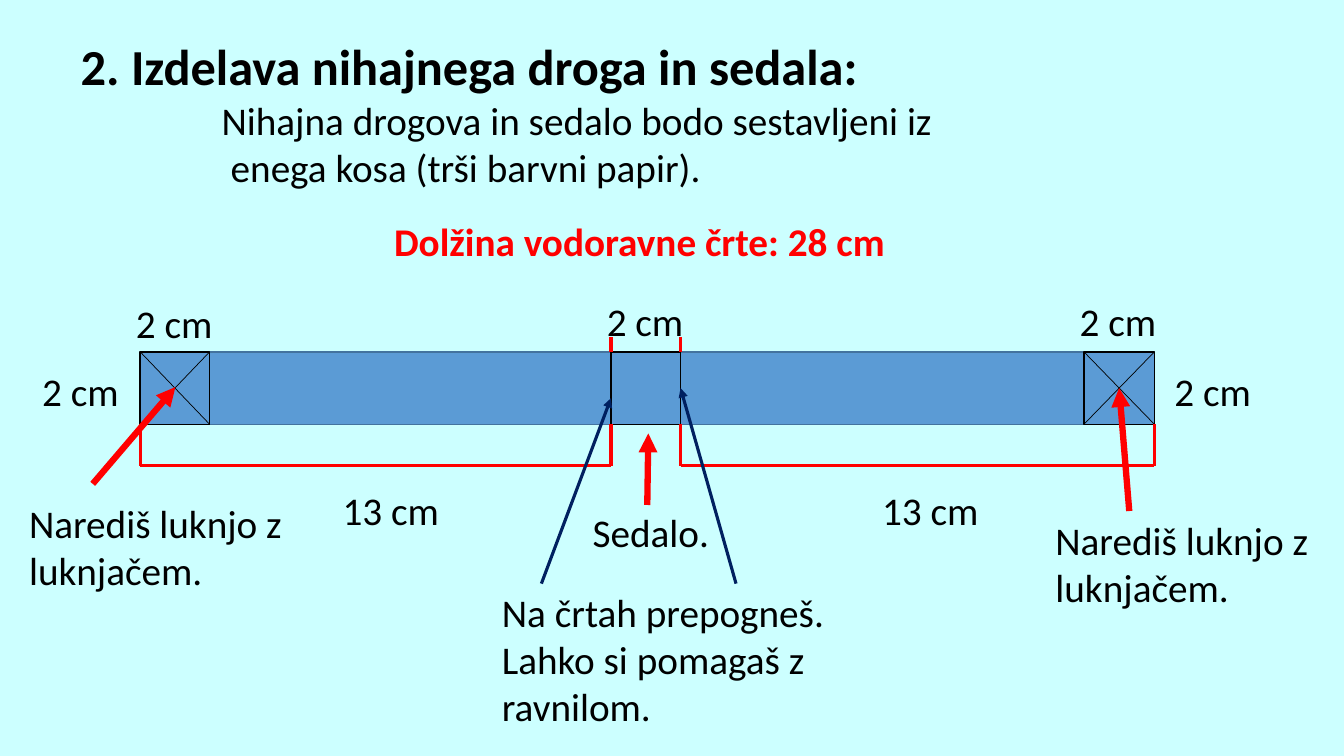
from lxml import etree
from pptx import Presentation
from pptx.dml.color import RGBColor
from pptx.enum.shapes import MSO_CONNECTOR, MSO_SHAPE
from pptx.enum.text import MSO_ANCHOR, MSO_AUTO_SIZE, PP_ALIGN
from pptx.oxml.ns import qn
from pptx.util import Inches, Pt

STRAIGHT = MSO_CONNECTOR.STRAIGHT
RECTANGLE = MSO_SHAPE.RECTANGLE
TOP = MSO_ANCHOR.TOP
LEFT = PP_ALIGN.LEFT
NO_AUTOFIT = MSO_AUTO_SIZE.NONE

BACKGROUND = RGBColor(0xCC, 0xFF, 0xFF)
BLACK = RGBColor(0x00, 0x00, 0x00)
RED = RGBColor(0xFF, 0x00, 0x00)
NAVY = RGBColor(0x00, 0x20, 0x60)
BLUE = RGBColor(0x5B, 0x9B, 0xD5)
BAR_EDGE = RGBColor(0x43, 0x73, 0x9E)
FONT = "Calibri"

# Content: text, then left, top, width, height in inches
TITLE = "2. Izdelava nihajnega droga in sedala:"
INTRO = ["Nihajna drogova in sedalo bodo sestavljeni iz",
         "enega kosa (trši barvni papir)."]
LENGTH = "Dolžina vodoravne črte: 28 cm"
HOLE_NOTE = "Narediš luknjo z luknjačem."
LABELS = [
    ("2 cm", (0.32, 3.59, 1.03, 0.57)),
    ("2 cm", (1.25, 2.92, 0.97, 0.57)),
    ("2 cm", (5.92, 2.9, 0.97, 0.57)),
    ("2 cm", (10.61, 2.9, 0.97, 0.57)),
    ("2 cm", (11.55, 3.59, 0.97, 0.57)),
    ("13 cm", (3.3, 4.78, 1.2, 0.57)),
    ("13 cm", (8.65, 4.78, 1.2, 0.57)),
    (HOLE_NOTE, (0.19, 4.9, 2.74, 1.04)),
    (HOLE_NOTE, (10.37, 5.07, 2.74, 1.04)),
    ("Sedalo.", (5.78, 4.99, 1.38, 0.57)),
    ("Na črtah prepogneš. Lahko si pomagaš z ravnilom.",
     (4.88, 5.79, 3.54, 1.51)),
]

# Strip geometry: squares as (left, right) edges
STRIP_TOP, STRIP_BOTTOM = 3.49, 4.21
LEFT_HOLE, SEAT, RIGHT_HOLE = (1.39, 2.08), (6.06, 6.75), (10.75, 11.45)
DIMENSION_Y = 4.62
FOLD_TOP = 3.34

# Arrows: start, end, colour, width in points
ARROWS = [
    ((0.92, 4.8), (1.74, 3.84), RED, 4.5),
    ((11.2, 5.07), (11.1, 3.85), RED, 4.5),
    ((6.42, 5.01), (6.43, 4.3), RED, 4.5),
    ((5.37, 5.79), (6.06, 3.95), NAVY, 2.25),
    ((7.3, 5.79), (6.75, 3.85), NAVY, 2.25),
]

presentation = Presentation()
presentation.slide_width = Inches(13.33)
presentation.slide_height = Inches(7.5)
slide = presentation.slides.add_slide(presentation.slide_layouts[5])
slide.background.fill.solid()
slide.background.fill.fore_color.rgb = BACKGROUND


def add_text(lines, box, shape=None, size=28, color=BLACK, bold=False,
             step=0):
    """Write lines into a box; each further line is indented by step inches."""
    left, top, width, height = map(Inches, box)
    if shape is None:
        shape = slide.shapes.add_textbox(left, top, width, height)
    shape.left, shape.top, shape.width, shape.height = left, top, width, height
    frame = shape.text_frame
    frame.word_wrap = True
    frame.auto_size = NO_AUTOFIT
    frame.vertical_anchor = TOP
    for index, line in enumerate(lines):
        paragraph = frame.add_paragraph() if index else frame.paragraphs[0]
        paragraph.alignment = LEFT
        if step and index:
            paragraph._p.get_or_add_pPr().set("marL", str(Inches(step * index)))
        run = paragraph.add_run()
        run.text = line
        run.font.name = FONT
        run.font.size = Pt(size)
        run.font.bold = bold
        run.font.color.rgb = color


def add_rectangle(left, right, edge):
    shape = slide.shapes.add_shape(
        RECTANGLE, Inches(left), Inches(STRIP_TOP),
        Inches(right - left), Inches(STRIP_BOTTOM - STRIP_TOP))
    shape.shadow.inherit = False
    shape.fill.solid()
    shape.fill.fore_color.rgb = BLUE
    shape.line.color.rgb = edge
    shape.line.width = Pt(1)


def add_line(start, end, color, width, arrow=False):
    line = slide.shapes.add_connector(STRAIGHT, *map(Inches, start + end))
    line.line.color.rgb = color
    line.line.width = Pt(width)
    if arrow:
        outline = line.line._get_or_add_ln()
        etree.SubElement(outline, qn("a:tailEnd"), type="triangle")
    etree.SubElement(line._element.spPr, qn("a:effectLst"))


# Heading and introduction
add_text([TITLE], (0.7, 0.3, 10.92, 0.66), shape=slide.shapes.title,
         size=36, bold=True)
add_text(INTRO, (2.1, 0.91, 9.52, 1.04), step=0.09)
add_text([LENGTH], (3.81, 2.11, 5.21, 0.57), color=RED, bold=True)

# Strip with the two holes and the seat
add_rectangle(LEFT_HOLE[1], RIGHT_HOLE[0], BAR_EDGE)
for left, right in (LEFT_HOLE, RIGHT_HOLE, SEAT):
    add_rectangle(left, right, BLACK)

# Labels
for label, box in LABELS:
    add_text([label], box)

# Diagonals that mark the hole centres
for left, right in (LEFT_HOLE, RIGHT_HOLE):
    add_line((left, STRIP_TOP), (right, STRIP_BOTTOM), BLACK, 0.5)
    add_line((left, STRIP_BOTTOM), (right, STRIP_TOP), BLACK, 0.5)

# Dimension brackets below each half
for left, right in ((LEFT_HOLE[0], SEAT[0]), (SEAT[1], RIGHT_HOLE[1])):
    for x in (left, right):
        add_line((x, STRIP_BOTTOM), (x, DIMENSION_Y), RED, 2.25)
    add_line((left, DIMENSION_Y), (right, DIMENSION_Y), RED, 2.25)

# Fold marks above the seat
for x in SEAT:
    add_line((x, STRIP_TOP), (x, FOLD_TOP), RED, 2.25)

# Arrows
for start, end, color, width in ARROWS:
    add_line(start, end, color, width, arrow=True)

presentation.save("out.pptx")
